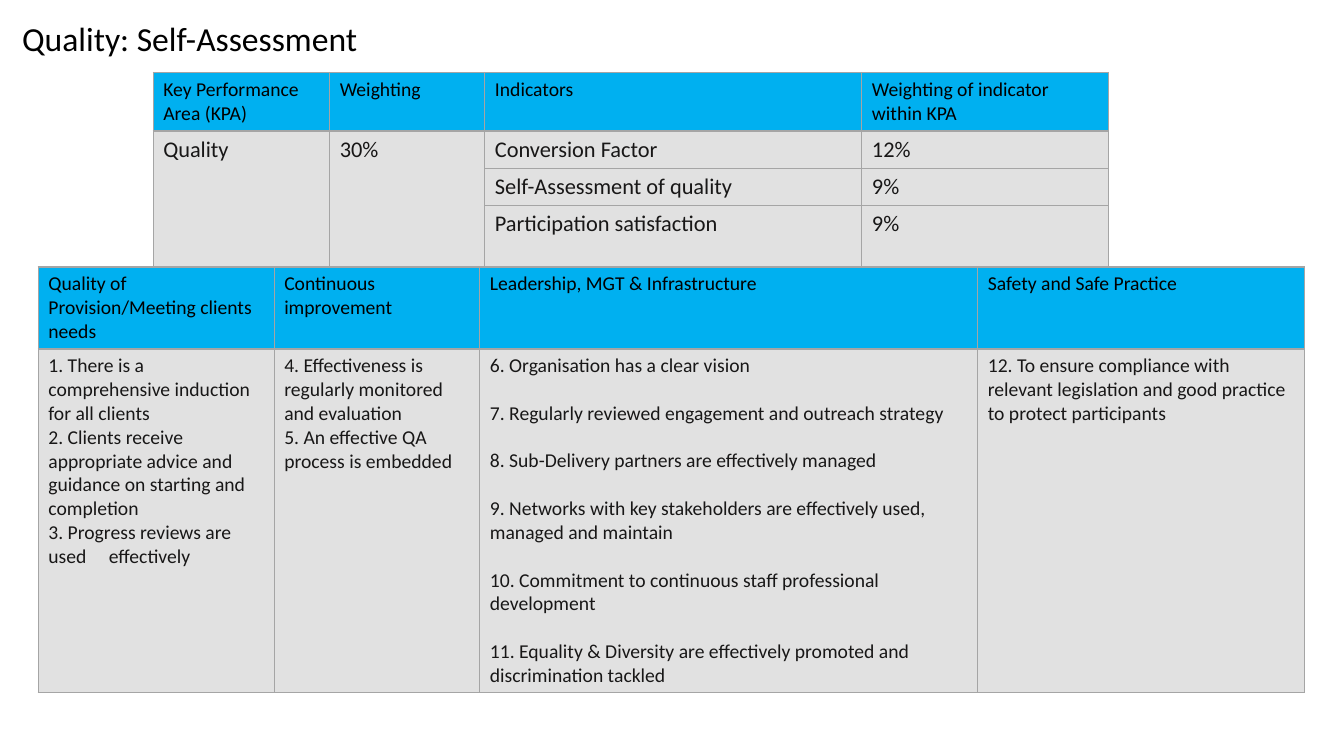
from lxml import etree
from pptx import Presentation
from pptx.dml.color import RGBColor
from pptx.enum.text import MSO_ANCHOR
from pptx.oxml.ns import qn
from pptx.util import Inches, Pt

MIDDLE = MSO_ANCHOR.MIDDLE
BLACK = RGBColor(0x00, 0x00, 0x00)
INK = RGBColor(0x18, 0x17, 0x17)
BLUE = RGBColor(0x00, 0xB0, 0xF0)
GREY = RGBColor(0xE1, 0xE1, 0xE1)
BORDER = RGBColor(0xA5, 0xA5, 0xA5)

TITLE_FORMAT = {"name": "Calibri", "size": Pt(24)}
HEADING_FORMAT = {"name": "Calibri", "size": Pt(14)}
WEIGHTING_FORMAT = {"name": "Calibri", "size": Pt(16)}
CRITERIA_FORMAT = HEADING_FORMAT

WEIGHTINGS = [
    ["Key Performance Area (KPA)", "Weighting", "Indicators",
     "Weighting of indicator within KPA"],
    ["Quality", "30%", "Conversion Factor", "12%"],
    [None, None, "Self-Assessment of quality", "9%"],
    [None, None, "Participation satisfaction", "9%"],
]
CRITERIA = [
    ["Quality of Provision/Meeting clients needs", "Continuous improvement",
     "Leadership, MGT & Infrastructure", "Safety and Safe Practice"],
    ["1. There is a comprehensive induction for all clients\n"
     "2. Clients receive appropriate advice and guidance on starting and completion\n"
     "3. Progress reviews are used\teffectively",
     "4. Effectiveness is regularly monitored and evaluation\n"
     "5. An effective QA process is embedded",
     "6. Organisation has a clear vision\n"
     "7. Regularly reviewed engagement and outreach strategy\n"
     "8. Sub-Delivery partners are effectively managed\n"
     "9. Networks with key stakeholders are effectively used, managed and maintain\n"
     "10. Commitment to continuous staff professional development\n"
     "11. Equality & Diversity are effectively promoted and discrimination tackled",
     "12. To ensure compliance with relevant legislation and good practice "
     "to protect participants"],
]


class SlideBuilder:
    """Holds the slide; every length is a percentage of the slide's size."""

    def __init__(self, presentation):
        self.presentation = presentation
        self.slide = presentation.slides.add_slide(presentation.slide_layouts[6])

    def across(self, percent):
        return round(self.presentation.slide_width * percent / 100)

    def down(self, percent):
        return round(self.presentation.slide_height * percent / 100)

    def fill_text(self, frame, text, text_format, color, gap=0):
        """Fill a text frame, one paragraph a line, with gap points between."""
        frame.text = text
        for index, paragraph in enumerate(frame.paragraphs):
            if index and gap:
                paragraph.space_before = Pt(gap)
            if "\t" in paragraph.text:
                properties = paragraph._p.get_or_add_pPr()
                tabs = etree.SubElement(properties, qn("a:tabLst"))
                etree.SubElement(tabs, qn("a:tab"), pos=str(Inches(0.6)), algn="l")
            for run in paragraph.runs:
                for name, value in text_format.items():
                    setattr(run.font, name, value)
                run.font.color.rgb = color

    def title(self, text, left, top, width, height):
        shape = self.slide.shapes.add_textbox(
            self.across(left), self.down(top), self.across(width), self.down(height))
        frame = shape.text_frame
        frame.word_wrap = True
        frame.vertical_anchor = MIDDLE
        self.fill_text(frame, text, TITLE_FORMAT, BLACK)
        frame.paragraphs[0].line_spacing = 0.9

    def style_cell(self, cell, color):
        properties = cell._tc.get_or_add_tcPr()
        for side in ("a:lnL", "a:lnR", "a:lnT", "a:lnB"):
            line = etree.SubElement(properties, qn(side), w=str(Pt(1)))
            fill = etree.SubElement(line, qn("a:solidFill"))
            etree.SubElement(fill, qn("a:srgbClr"), val=str(BORDER))
        cell.fill.solid()
        cell.fill.fore_color.rgb = color

    def table(self, rows, left, top, widths, heights, body_format, gaps=None):
        """Draw a table; None joins a cell to the one above it, and gaps
        gives the paragraph spacing of body cells by column."""
        gaps = gaps or {}
        table = self.slide.shapes.add_table(
            len(heights), len(widths), self.across(left), self.down(top),
            self.across(sum(widths)), self.down(sum(heights))).table
        table.first_row = table.horz_banding = False
        for column, width in zip(table.columns, widths):
            column.width = self.across(width)
        for row, height in zip(table.rows, heights):
            row.height = self.down(height)
        for row_index, texts in enumerate(rows):
            for column_index, text in enumerate(texts):
                cell = table.cell(row_index, column_index)
                self.style_cell(cell, GREY if row_index else BLUE)
                if text is None:
                    continue
                if row_index:
                    self.fill_text(cell.text_frame, text, body_format, INK,
                                   gaps.get(column_index, 0))
                else:
                    self.fill_text(cell.text_frame, text, HEADING_FORMAT, BLACK)
        for column_index in range(len(widths)):
            joined = [index for index, texts in enumerate(rows)
                      if texts[column_index] is None]
            if joined:
                table.cell(joined[0] - 1, column_index).merge(
                    table.cell(joined[-1], column_index))


def main():
    presentation = Presentation()
    presentation.slide_width = Inches(13.33)
    presentation.slide_height = Inches(7.5)
    builder = SlideBuilder(presentation)
    builder.title("Quality: Self-Assessment", 0.9, 1.2, 31.28, 8.4)
    builder.table(WEIGHTINGS, 11.4, 9.6, [13.13, 11.55, 28.05, 18.38],
                  [7.73, 4.93, 4.93, 8.13], WEIGHTING_FORMAT)
    builder.table(CRITERIA, 2.85, 35.33, [17.55, 15.3, 37.05, 24.3],
                  [10.83, 45.47], CRITERIA_FORMAT, gaps={2: 17})
    presentation.save("out.pptx")


if __name__ == "__main__":
    main()
